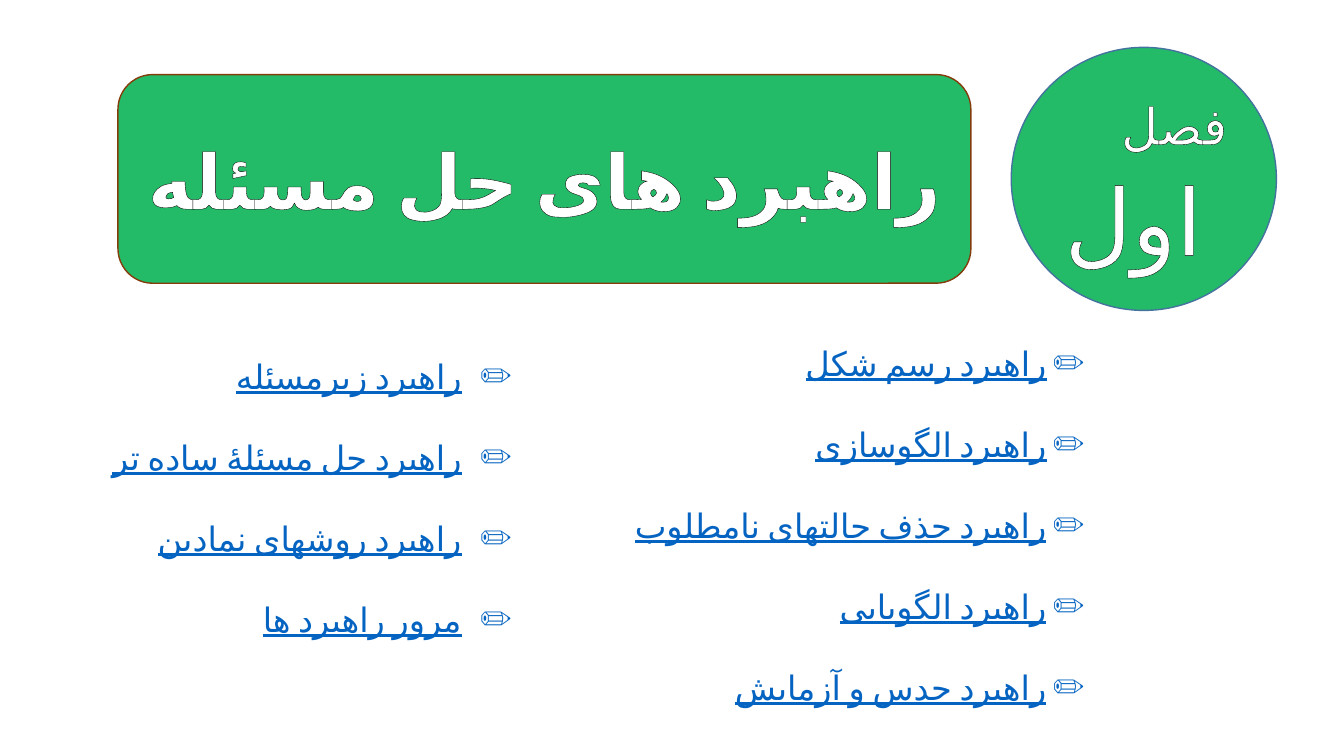
import pptx
import pptx.dml.color
import pptx.enum.shapes
import pptx.enum.text
import pptx.oxml.ns
import pptx.util
from lxml import etree
from pptx.util import Inches

FONT = "Calibri"
GREEN, WHITE, BLACK, LINK = "00B050", "FFFFFF", "000000", "0563C1"
ALIGN = pptx.enum.text.PP_ALIGN
SHAPE = pptx.enum.shapes.MSO_SHAPE


def rgb(value):
    """Return the colour for a hex string."""
    return pptx.dml.color.RGBColor.from_string(value)


def add_child(parent, tag, index=None, **attrs):
    """Add a DrawingML element to a parent and return it."""
    child = etree.Element(pptx.oxml.ns.qn(tag), attrs)
    parent.insert(len(parent) if index is None else index, child)
    return child


def style_run(r, size, color, outline=None, bold=False, underline=False):
    """Format a Persian run, with an optional black outline width in points."""
    r.font.name = FONT
    r.font.size = pptx.util.Pt(size)
    r.font.bold = bold
    r.font.underline = underline
    r.font.color.rgb = rgb(color)
    rPr = r.font._element
    rPr.set("lang", "fa-IR")
    add_child(rPr, "a:cs", typeface=FONT)
    if outline:
        width = str(pptx.util.Pt(outline))
        ln = add_child(rPr, "a:ln", 0, w=width)
        add_child(add_child(ln, "a:solidFill"), "a:srgbClr", val=BLACK)


def add_panel(s, kind, box, line):
    """Add a translucent green shape filling the box."""
    sp = s.shapes.add_shape(kind, *map(Inches, box))
    sp.shadow.inherit = False
    sp.fill.solid()
    sp.fill.fore_color.rgb = rgb(GREEN)
    clr = sp._element.spPr.find(".//" + pptx.oxml.ns.qn("a:srgbClr"))
    add_child(clr, "a:alpha", val="86000")
    sp.line.color.rgb = rgb(line)
    sp.line.width = pptx.util.Pt(1)


def place(sp, box):
    """Move a text shape to the box and fix its wrapping."""
    sp.left, sp.top, sp.width, sp.height = map(Inches, box)
    sp.text_frame.word_wrap = True
    sp.text_frame.auto_size = pptx.enum.text.MSO_AUTO_SIZE.NONE
    return sp.text_frame


def add_badge(s, box):
    """Add the chapter circle with its two lines of text."""
    x, y, w, h = box
    add_panel(s, SHAPE.OVAL, box, "43739E")
    text_box = (x + 0.18, y, w - 0.57, h - 0.29)
    tf = place(s.shapes.add_textbox(*map(Inches, text_box)), text_box)
    lines = [
        (ALIGN.RIGHT, [("فصل", 36), (" ", 66)]),
        (ALIGN.CENTER, [("اول", 66)]),
    ]
    for i, (align, runs) in enumerate(lines):
        p = tf.add_paragraph() if i else tf.paragraphs[0]
        p.alignment = align
        p._p.get_or_add_pPr().set("rtl", "1")
        for text, size in runs:
            r = p.add_run()
            r.text = text
            style_run(r, size, WHITE, outline=2.25)


def add_title(s, box):
    """Add the rounded banner and lay the title over it."""
    add_panel(s, SHAPE.ROUNDED_RECTANGLE, box, "843C0B")
    sp = s.shapes.title
    s.shapes._spTree.append(sp._element)
    tf = place(sp, box)
    tf.text = "راهبرد های حل مسئله"
    tf.vertical_anchor = pptx.enum.text.MSO_ANCHOR.MIDDLE
    p = tf.paragraphs[0]
    p.alignment = ALIGN.CENTER
    style_run(p.runs[0], 54, WHITE, outline=0.75, bold=True)


def fill_list(sp, box, items, indent):
    """Fill a body placeholder with a right-to-left pencil list."""
    tf = place(sp, box)
    tf.text = "\n".join(items)
    for i, p in enumerate(tf.paragraphs):
        pPr = p._p.get_or_add_pPr()
        pPr.set("marL", str(Inches(indent)))
        pPr.set("indent", str(-Inches(indent)))
        pPr.set("rtl", "1")
        add_child(pPr, "a:buFont", typeface="Arial")
        add_child(pPr, "a:buChar", char="✏")
        p.alignment = ALIGN.RIGHT
        p.space_before = pptx.util.Pt(29 if i else 0)
        style_run(p.runs[0], 24, LINK, underline=True)


def build_contents(prs):
    """Build the chapter contents slide."""
    s = prs.slides.add_slide(prs.slide_layouts[3])
    add_badge(s, (10.03, 0.47, 2.63, 2.61))
    add_title(s, (1.17, 0.74, 8.46, 2.07))
    fill_list(s.placeholders[1], (5.5, 3.35, 5.36, 4.14), [
        "راهبرد رسم شکل",
        "راهبرد الگوسازی",
        "راهبرد حذف حالتهای نامطلوب",
        "راهبرد الگویابی",
        "راهبرد حدس و آزمایش",
    ], 0.38)
    fill_list(s.placeholders[2], (0.3, 3.48, 4.88, 2.93), [
        "راهبرد زیرمسئله",
        "راهبرد حل مسئلۀ ساده تر",
        "راهبرد روشهای نمادین",
        "مرور راهبرد ها",
    ], 0.5)


def main():
    """Create and save the presentation."""
    prs = pptx.Presentation()
    prs.slide_width, prs.slide_height = Inches(13.33), Inches(7.5)
    build_contents(prs)
    prs.save("out.pptx")


if __name__ == "__main__":
    main()
